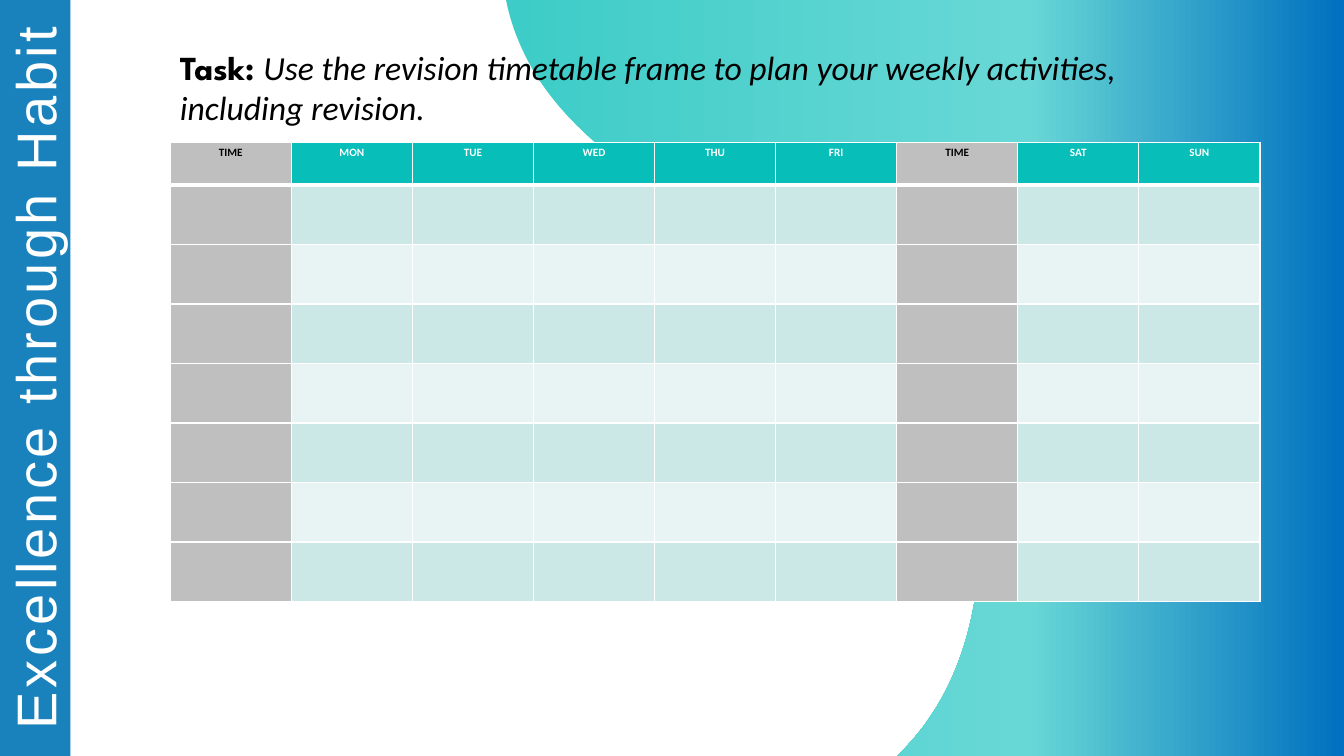
from copy import deepcopy
from dataclasses import dataclass

from lxml import etree
from pptx import Presentation
from pptx import util as u
from pptx.dml.color import RGBColor
from pptx.enum import shapes, text
from pptx.oxml.ns import qn

SLIDE_WIDTH = u.Inches(13.33)
SLIDE_HEIGHT = u.Inches(7.5)

WHITE = RGBColor(0xFF, 0xFF, 0xFF)
BLACK = RGBColor(0x00, 0x00, 0x00)
BAND_BLUE = RGBColor(0x19, 0x82, 0xBD)
DEEP_BLUE = RGBColor(0x00, 0x70, 0xC0)
LIGHT_TEAL = RGBColor(0x68, 0xD8, 0xD6)
MID_TEAL = RGBColor(0x3D, 0xCC, 0xC7)
HEADER_TEAL = RGBColor(0x07, 0xBE, 0xB8)
TIME_GREY = RGBColor(0xBF, 0xBF, 0xBF)
ODD_ROW = RGBColor(0xCC, 0xE8, 0xE6)
EVEN_ROW = RGBColor(0xE7, 0xF4, 0xF3)

HEADINGS = ["TIME", "MON", "TUE", "WED", "THU", "FRI", "TIME", "SAT", "SUN"]
BODY_ROWS = 7
COLUMN_SHARE, HEADER_SHARE, ROW_SHARE = 9.01, 5.6, 7.87

Point = tuple[float, float]


@dataclass
class Curve:
    """A cubic curve that continues from the previous point."""
    first_control: Point
    second_control: Point
    end: Point


@dataclass
class Stop:
    position: float
    color: RGBColor


@dataclass
class Wording:
    font: str
    size: float
    color: RGBColor
    bold: bool = False
    italic: bool = False


# Wave outline, in percent of the slide's width and height
WAVE_START = (66.6, 100.27)
WAVE_CURVES = [
    Curve((66.75, 100), (66.9, 99.73), (67.05, 99.47)),
    Curve((70.2, 93.87), (71.85, 86.67), (72.53, 79.33)),
    Curve((73.43, 69.87), (72.6, 59.87), (69.45, 51.6)),
    Curve((65.85, 42.4), (59.7, 36.27), (53.93, 30.4)),
    Curve((48.08, 24.4), (42.15, 17.73), (39.23, 7.87)),
    Curve((38.48, 5.33), (37.95, 2.67), (37.65, 0)),
]
WAVE_CORNERS = [(100, 0), (100, WAVE_START[1])]
WAVE_STOPS = [Stop(0, MID_TEAL), Stop(0.62, LIGHT_TEAL), Stop(1, DEEP_BLUE)]


def across(percent: float) -> int:
    return round(SLIDE_WIDTH * percent / 100)


def down(percent: float) -> int:
    return round(SLIDE_HEIGHT * percent / 100)


def format_run(run, wording: Wording) -> None:
    run.font.name = wording.font
    run.font.size = u.Pt(wording.size)
    run.font.color.rgb = wording.color
    run.font.bold = wording.bold
    run.font.italic = wording.italic


def draw_band(slide) -> None:
    band = slide.shapes.add_shape(
        shapes.MSO_SHAPE.RECTANGLE, 0, 0, across(5.25), SLIDE_HEIGHT)
    band.shadow.inherit = False
    band.fill.solid()
    band.fill.fore_color.rgb = BAND_BLUE
    band.line.fill.background()

    # The motto reads upwards, centred on the band
    length, thickness = SLIDE_HEIGHT, down(10.27)
    motto = slide.shapes.add_textbox(
        across(2.55) - length // 2, down(50) - thickness // 2, length, thickness)
    motto.rotation = 270
    frame = motto.text_frame
    frame.word_wrap = True
    frame.text = "Excellence through Habit"
    paragraph = frame.paragraphs[0]
    paragraph.alignment = text.PP_ALIGN.CENTER
    run = paragraph.runs[0]
    format_run(run, Wording("Arial", 40, WHITE))
    run.font._element.set("spc", "250")


def bend_segments(shape, curves: list[Curve]) -> None:
    """Turn the leading straight segments of a freeform into curves."""
    segments = list(shape._element.iter(qn("a:lnTo")))
    for segment, curve in zip(segments, curves):
        bend = etree.Element(qn("a:cubicBezTo"))
        for x, y in (curve.first_control, curve.second_control, curve.end):
            etree.SubElement(bend, qn("a:pt"), x=str(across(x) - shape.left),
                             y=str(down(y) - shape.top))
        segment.getparent().replace(segment, bend)


def draw_wave(slide) -> None:
    points = [WAVE_START, *(curve.end for curve in WAVE_CURVES), *WAVE_CORNERS]
    outline = [(across(x), down(y)) for x, y in points]
    builder = slide.shapes.build_freeform(*outline[0], scale=1.0)
    builder.add_line_segments(outline[1:], close=True)
    wave = builder.convert_to_shape()
    bend_segments(wave, WAVE_CURVES)
    wave.shadow.inherit = False
    wave.line.fill.background()
    wave.fill.gradient()
    wave.fill.gradient_angle = 0
    stop_list = next(wave._element.iter(qn("a:gsLst")))
    stop_list.append(deepcopy(stop_list[0]))
    for gradient_stop, stop in zip(wave.fill.gradient_stops, WAVE_STOPS):
        gradient_stop.position = stop.position
        gradient_stop.color.rgb = stop.color


def set_borders(cell, top: float, bottom: float) -> None:
    properties = cell._tc.get_or_add_tcPr()
    for side, points in (("L", 1), ("R", 1), ("T", top), ("B", bottom)):
        line = etree.SubElement(
            properties, qn(f"a:ln{side}"), w=str(u.Pt(points)))
        fill = etree.SubElement(line, qn("a:solidFill"))
        etree.SubElement(fill, qn("a:srgbClr"), val=str(WHITE))


def draw_timetable(slide) -> None:
    frame = slide.shapes.add_table(
        BODY_ROWS + 1, len(HEADINGS), across(12.67), down(18.88),
        across(COLUMN_SHARE * len(HEADINGS)),
        down(HEADER_SHARE + ROW_SHARE * BODY_ROWS))
    table = frame.table
    table.horz_banding = False
    for column in table.columns:
        column.width = across(COLUMN_SHARE)
    for row_number, row in enumerate(table.rows):
        is_header = row_number == 0
        row.height = down(HEADER_SHARE if is_header else ROW_SHARE)
        day_color = (HEADER_TEAL if is_header
                     else ODD_ROW if row_number % 2 else EVEN_ROW)
        for heading, cell in zip(HEADINGS, row.cells):
            is_time = heading == "TIME"
            set_borders(cell, top=3 if row_number == 1 else 1,
                        bottom=3 if is_header else 1)
            cell.fill.solid()
            cell.fill.fore_color.rgb = TIME_GREY if is_time else day_color
            if is_header:
                cell.margin_left = cell.margin_right = u.Inches(0.06)
                cell.margin_top = cell.margin_bottom = u.Inches(0.03)
                cell.text_frame.text = heading
                paragraph = cell.text_frame.paragraphs[0]
                paragraph.alignment = text.PP_ALIGN.CENTER
                format_run(paragraph.runs[0], Wording(
                    "Calibri", 8, BLACK if is_time else WHITE, bold=True))


def write_task(slide) -> None:
    title = slide.shapes.title
    title.left, title.top = across(12.64), down(5.47)
    title.width, title.height = across(76.29), down(12.13)
    frame = title.text_frame
    frame.word_wrap = True
    frame.auto_size = text.MSO_AUTO_SIZE.SHAPE_TO_FIT_TEXT
    frame.vertical_anchor = text.MSO_ANCHOR.TOP
    paragraph = frame.paragraphs[0]
    paragraph.alignment = text.PP_ALIGN.LEFT
    paragraph.text = "Task: "
    paragraph.add_run().text = ("Use the revision timetable frame to plan your "
                                "weekly activities, including revision.")
    label, instruction = paragraph.runs
    format_run(label, Wording("League Spartan", 24, BLACK, bold=True))
    format_run(instruction, Wording("Calibri", 24, BLACK, italic=True))
    # Bring the title in front of the wave
    slide.shapes._spTree.append(title._element)


def main() -> None:
    presentation = Presentation()
    presentation.slide_width = SLIDE_WIDTH
    presentation.slide_height = SLIDE_HEIGHT
    slide = presentation.slides.add_slide(presentation.slide_layouts[5])
    draw_band(slide)
    draw_wave(slide)
    draw_timetable(slide)
    write_task(slide)
    presentation.save("out.pptx")


if __name__ == "__main__":
    main()
